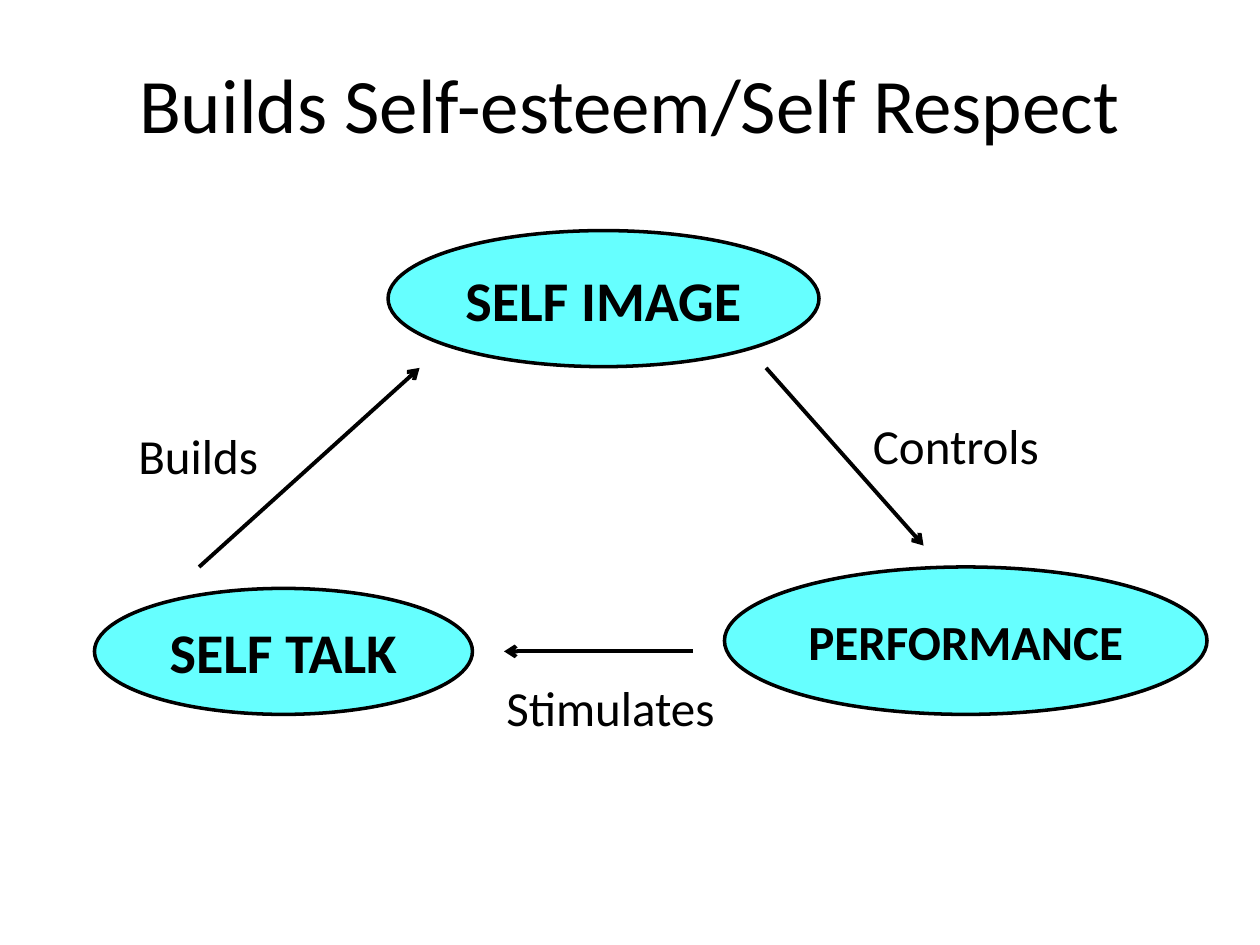
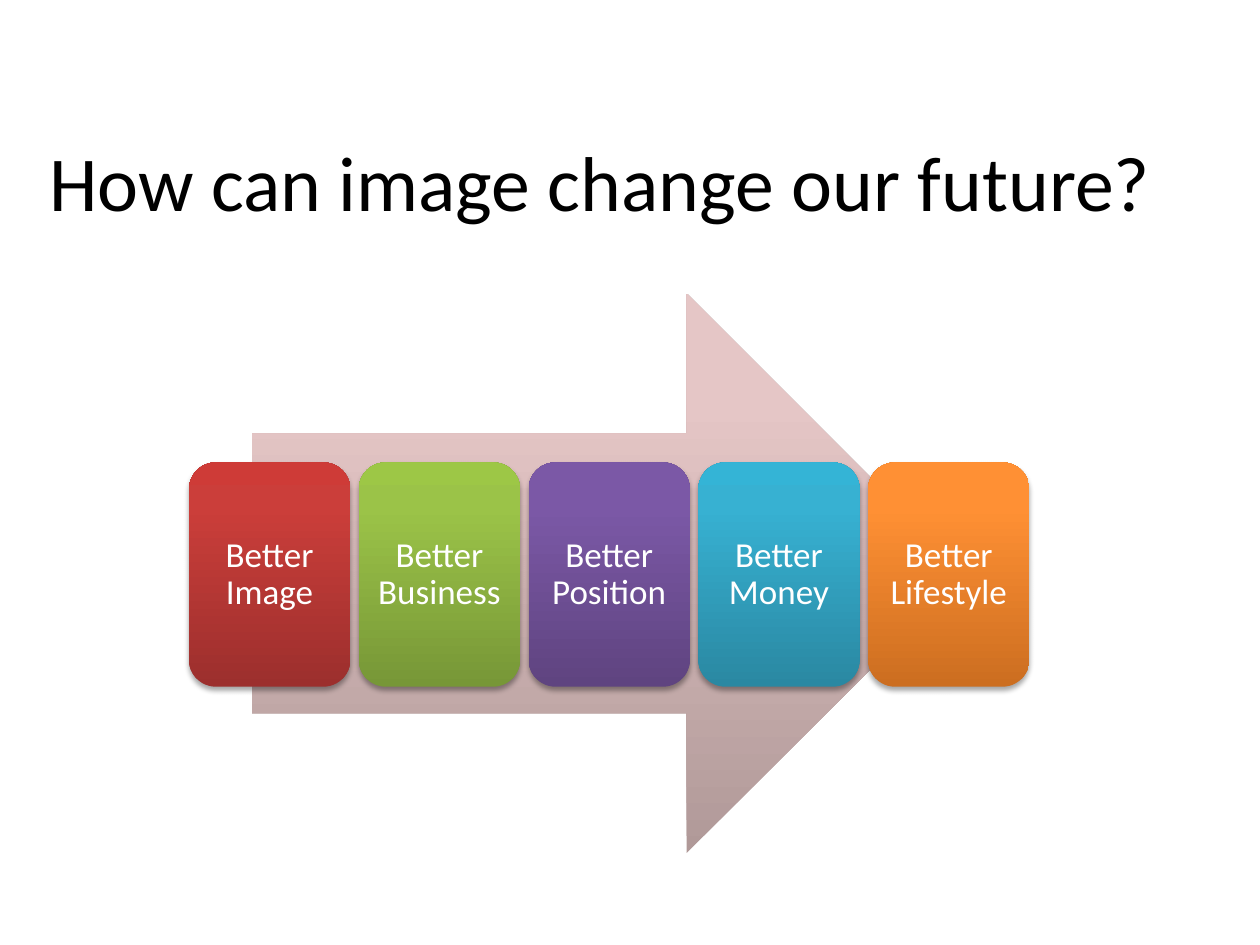
from copy import deepcopy
from dataclasses import dataclass

from lxml import etree
from pptx import Presentation
from pptx import util as u
from pptx.dml.color import RGBColor
from pptx.enum import shapes, text
from pptx.oxml.ns import qn

FONT = "Calibri"
BLACK = RGBColor(0x00, 0x00, 0x00)
WHITE = RGBColor(0xFF, 0xFF, 0xFF)
CYAN = RGBColor(0x66, 0xFF, 0xFF)
STOP_POSITIONS = (0, 0.8, 1)


@dataclass(frozen=True)
class Area:
    left: float
    top: float
    width: float
    height: float

    def lengths(self):
        return [u.Inches(v) for v in (self.left, self.top, self.width, self.height)]


@dataclass(frozen=True)
class Stage:
    words: str
    area: Area
    size: int = 32


@dataclass(frozen=True)
class Link:
    words: str
    label: Area
    start: tuple[float, float]
    end: tuple[float, float]


@dataclass(frozen=True)
class Card:
    words: str
    shades: tuple[str, str, str]  # bottom to top


STAGES = (
    Stage("SELF TALK", Area(0.75, 4.67, 3, 1)),
    Stage("SELF IMAGE", Area(3.08, 1.83, 3.42, 1.08)),
    Stage("PERFORMANCE", Area(5.75, 4.5, 3.83, 1.17), size=28),
)
LINKS = (
    Link("Controls", Area(6.83, 3.25, 1.53, 0.57), (6.08, 2.92), (7.33, 4.33)),
    Link("Stimulates", Area(3.92, 5.33, 1.87, 0.57), (5.5, 5.17), (4, 5.17)),
    Link("Builds", Area(1, 3.33, 1.16, 0.57), (1.58, 4.5), (3.33, 2.92)),
)
ARROW_SHADES = ("B09998", "E5C6C6", "E6C7C6")
CARDS = (
    Card("Better Image", ("9C2F2D", "CB3E3A", "CE3B37")),
    Card("Better Business", ("779737", "9BC348", "9DC746")),
    Card("Better Position", ("5F4480", "7B58A6", "7C57A8")),
    Card("Better Money", ("2A88A2", "37B1D2", "34B4D6")),
    Card("Better Lifestyle", ("CC6E20", "FF9034", "FF9136")),
)
CARD_ROW = Area(1.5, 3.67, 6.67, 1.78)
CARD_WIDTH = 1.28


def write_text(shape, words: str, *, size: float, color=BLACK, bold=False,
               align=text.PP_ALIGN.LEFT, anchor=text.MSO_ANCHOR.TOP, wrap=True,
               insets=(0.1, 0.05, 0.1, 0.05), spacing=1.0) -> None:
    frame = shape.text_frame
    frame.word_wrap = wrap
    frame.vertical_anchor = anchor
    (frame.margin_left, frame.margin_top,
     frame.margin_right, frame.margin_bottom) = [u.Inches(v) for v in insets]
    para = frame.paragraphs[0]
    para.alignment = align
    para.line_spacing = spacing
    span = para.add_run()
    span.text = words
    span.font.name = FONT
    span.font.size = u.Pt(size)
    span.font.bold = bold
    span.font.color.rgb = color


def add_text(page, area: Area, words: str, **style) -> None:
    write_text(page.shapes.add_textbox(*area.lengths()), words, **style)


def add_title(page, area: Area, words: str, **style) -> None:
    add_text(page, area, words, **{"size": 44, **style})


def add_shape(page, kind, area: Area):
    shape = page.shapes.add_shape(kind, *area.lengths())
    shape.shadow.inherit = False
    return shape


def add_stage(page, stage: Stage) -> None:
    oval = add_shape(page, shapes.MSO_SHAPE.OVAL, stage.area)
    oval.fill.solid()
    oval.fill.fore_color.rgb = CYAN
    oval.line.color.rgb = BLACK
    oval.line.width = u.Pt(2)
    write_text(oval, stage.words, size=stage.size, bold=True,
               align=text.PP_ALIGN.CENTER, anchor=text.MSO_ANCHOR.MIDDLE)


def add_link(page, link: Link) -> None:
    ends = [u.Inches(v) for v in link.start + link.end]
    line = page.shapes.add_connector(shapes.MSO_CONNECTOR.STRAIGHT, *ends)
    line.line.color.rgb = BLACK
    line.line.width = u.Pt(2.25)
    properties = line._element.spPr
    etree.SubElement(properties.find(qn("a:ln")), qn("a:tailEnd"), type="arrow")
    etree.SubElement(properties, qn("a:effectLst"))
    add_text(page, link.label, link.words, size=28, wrap=False)


def shade(shape, shades: tuple[str, str, str]) -> None:
    """Fill with a three-stop gradient rising from the bottom edge."""
    shape.line.fill.background()
    shape.fill.gradient()
    shape.fill.gradient_angle = 90
    stop_list = shape._element.spPr.find(".//" + qn("a:gsLst"))
    stop_list.append(deepcopy(stop_list[-1]))
    for stop, position, value in zip(shape.fill.gradient_stops, STOP_POSITIONS, shades):
        stop.position = position
        stop.color.rgb = RGBColor.from_string(value)


def add_drop_shadow(shape) -> None:
    effects = shape._element.spPr.find(qn("a:effectLst"))
    shadow = etree.SubElement(
        effects, qn("a:outerShdw"), blurRad=str(u.Pt(3.1)), dist=str(u.Pt(1.8)),
        dir="5400000", rotWithShape="0")
    color = etree.SubElement(shadow, qn("a:srgbClr"), val=str(BLACK))
    etree.SubElement(color, qn("a:alpha"), val="35000")


def add_card(page, card: Card, area: Area) -> None:
    tile = add_shape(page, shapes.MSO_SHAPE.ROUNDED_RECTANGLE, area)
    shade(tile, card.shades)
    add_drop_shadow(tile)
    write_text(tile, card.words, size=20, color=WHITE, spacing=0.9,
               align=text.PP_ALIGN.CENTER, anchor=text.MSO_ANCHOR.MIDDLE,
               insets=(0.02, 0.02, 0.02, 0.02))


def build_cycle(page) -> None:
    add_title(page, Area(0.5, 0.3, 9, 1.03), "Builds Self-esteem/Self Respect",
              align=text.PP_ALIGN.CENTER, anchor=text.MSO_ANCHOR.MIDDLE)
    for stage in STAGES:
        add_stage(page, stage)
    for link in LINKS:
        add_link(page, link)


def build_future(page) -> None:
    add_title(page, Area(0, 0.83, 10, 1.5), "How can image change our future?",
              size=44.4, insets=(0.39, 0.23, 0.1, 0.05))
    # Broad arrow behind the row of cards
    arrow = add_shape(page, shapes.MSO_SHAPE.RIGHT_ARROW, Area(2, 2.33, 5.67, 4.44))
    shade(arrow, ARROW_SHADES)
    # Cards spread evenly over the row
    pitch = (CARD_ROW.width - CARD_WIDTH) / (len(CARDS) - 1)
    for index, card in enumerate(CARDS):
        left = CARD_ROW.left + index * pitch
        add_card(page, card, Area(left, CARD_ROW.top, CARD_WIDTH, CARD_ROW.height))


def main() -> None:
    deck = Presentation()
    deck.slide_width, deck.slide_height = u.Inches(10), u.Inches(7.5)
    for build in (build_cycle, build_future):
        build(deck.slides.add_slide(deck.slide_layouts[6]))
    deck.save("out.pptx")


if __name__ == "__main__":
    main()
